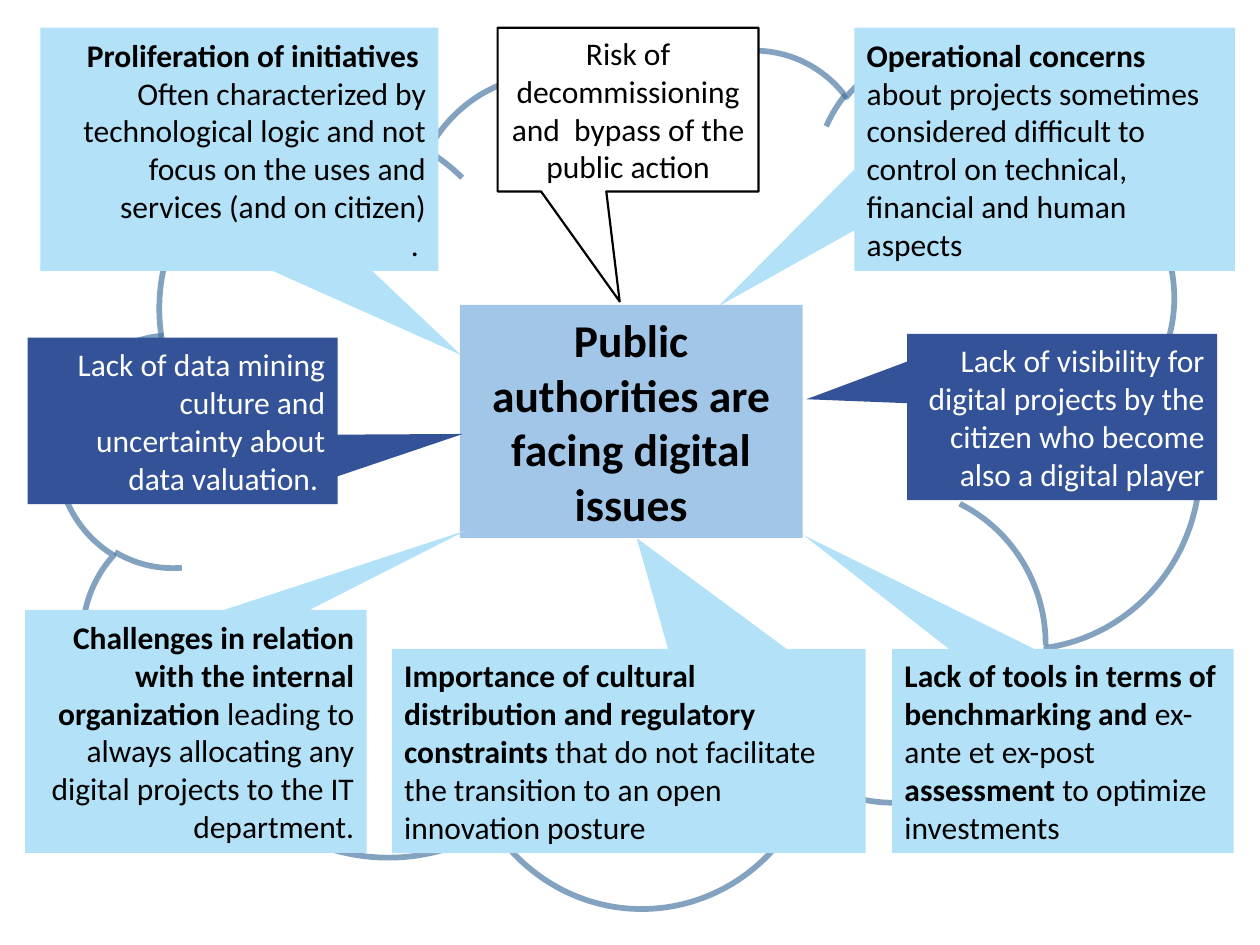
from lxml import etree
from pptx import Presentation
from pptx.dml.color import RGBColor
from pptx.enum.shapes import MSO_SHAPE as Shape
from pptx.enum.text import MSO_ANCHOR as Anchor, MSO_AUTO_SIZE as AutoSize, PP_ALIGN as Align
from pptx.oxml.ns import qn
from pptx.util import Inches, Pt

LIGHT, DARK, WHITE, BLACK = "B2E1F8", "335297", "FFFFFF", "000000"
FRAME_FORMAT = {
    "word_wrap": True,
    "auto_size": AutoSize.SHAPE_TO_FIT_TEXT,
    "vertical_anchor": Anchor.MIDDLE,
    "margin_left": Inches(0.1),
    "margin_right": Inches(0.1),
    "margin_top": Inches(0.05),
    "margin_bottom": Inches(0.05),
}

# Box, pointer, fill, alignment, paragraphs of (text, bold) runs
ISSUES = [
    ((0.32, 0.22, 3.16, 1.93), (0.557, 0.846), LIGHT, Align.RIGHT, [
        [("Proliferation of initiatives ", True)],
        [("Often characterized by technological logic and not focus on the uses "
          "and services (and on citizen)\n. ", False)]]),
    ((6.78, 0.22, 3.02, 1.93), (-0.857, 0.646), LIGHT, Align.LEFT, [
        [("Operational concerns ", True),
         ("about projects sometimes considered difficult to control on technical, "
          "financial and human aspects", False)]]),
    ((0.2, 4.84, 2.71, 1.93), (0.792, -0.827), LIGHT, Align.RIGHT, [
        [("Challenges in relation with the internal organization ", True),
         ("leading to always allocating any digital projects to the IT department.",
          False)]]),
    ((3.11, 5.15, 3.76, 1.62), (0.017, -1.043), LIGHT, Align.LEFT, [
        [("Importance of cultural distribution and regulatory constraints ", True),
         ("that do not facilitate the transition to an open innovation posture",
          False)]]),
    ((7.08, 5.15, 2.71, 1.62), (-0.759, -1.057), LIGHT, Align.LEFT, [
        [("Lack of tools in terms of benchmarking and ", True),
         ("ex-ante et ex-post ", False),
         ("assessment ", True),
         ("to optimize investments", False)]]),
    ((0.22, 2.68, 2.46, 1.32), (0.904, 0.079), DARK, Align.RIGHT, [
        [("Lack of data mining culture and uncertainty about data valuation. ", False)]]),
    ((7.2, 2.65, 2.46, 1.32), (-0.825, -0.107), DARK, Align.RIGHT, [
        [("Lack of visibility for digital projects by the citizen who become also "
          "a digital player", False)]]),
    ((3.95, 0.22, 2.07, 1.3), (-0.032, 1.172), WHITE, Align.CENTER, [
        [("Risk of decommissioning and  bypass of the public action", False)]]),
]


def paint(color_format, color, opacity=100):
    """Set a solid fill's colour, and its opacity in percent."""
    color_format.solid()
    color_format.fore_color.rgb = RGBColor.from_string(color)
    if opacity < 100:
        tone = color_format._xPr.find(f"{qn('a:solidFill')}/{qn('a:srgbClr')}")
        etree.SubElement(tone, qn("a:alpha"), val=str(opacity * 1000))


def add_box(slide, kind, box, fill=None, opacity=100):
    shape = slide.shapes.add_shape(kind, *map(Inches, box))
    shape.shadow.inherit = False
    if fill:
        paint(shape.fill, fill, opacity)
    else:
        shape.fill.background()
    shape.line.fill.background()
    return shape


def outline(shape, color, width, opacity=100):
    paint(shape.line.fill, color, opacity)
    shape.line.width = Pt(width)


def write(shape, paragraphs, align, color, size=18):
    frame = shape.text_frame
    for name, value in FRAME_FORMAT.items():
        setattr(frame, name, value)
    for index, runs in enumerate(paragraphs):
        paragraph = frame.add_paragraph() if index else frame.paragraphs[0]
        paragraph.alignment = align
        for text, bold in runs:
            for number, line in enumerate(text.split("\n")):
                if number:
                    paragraph.add_line_break()
                run = paragraph.add_run()
                run.text = line
                font_format = {"name": "Calibri", "size": Pt(size), "bold": bold}
                for name, value in font_format.items():
                    setattr(run.font, name, value)
                run.font.color.rgb = RGBColor.from_string(color)


def add_callout(slide, box, pointer, fill, align, paragraphs):
    callout = add_box(slide, Shape.RECTANGULAR_CALLOUT, box, fill)
    for index, offset in enumerate(pointer):
        callout.adjustments[index] = offset
    if fill == WHITE:
        outline(callout, BLACK, 1.25)
    write(callout, paragraphs, align, WHITE if fill == DARK else BLACK)


def main():
    presentation = Presentation()
    presentation.slide_width, presentation.slide_height = Inches(10), Inches(7.5)
    slide = presentation.slides.add_slide(presentation.slide_layouts[6])

    # Cloud behind the issues
    cloud = add_box(slide, Shape.CLOUD, (0.46, 0.38, 9.06, 6.81))
    outline(cloud, "43739E", 3.25, 65)

    # Central theme
    theme = add_box(slide, Shape.RECTANGLE, (3.65, 2.42, 2.72, 1.85), "5B9BD5", 57)
    write(theme, [[("Public authorities are facing digital issues", True)]],
          Align.CENTER, BLACK, 26)

    # Issues pointing at the theme
    for issue in ISSUES:
        add_callout(slide, *issue)

    presentation.save("out.pptx")


if __name__ == "__main__":
    main()
